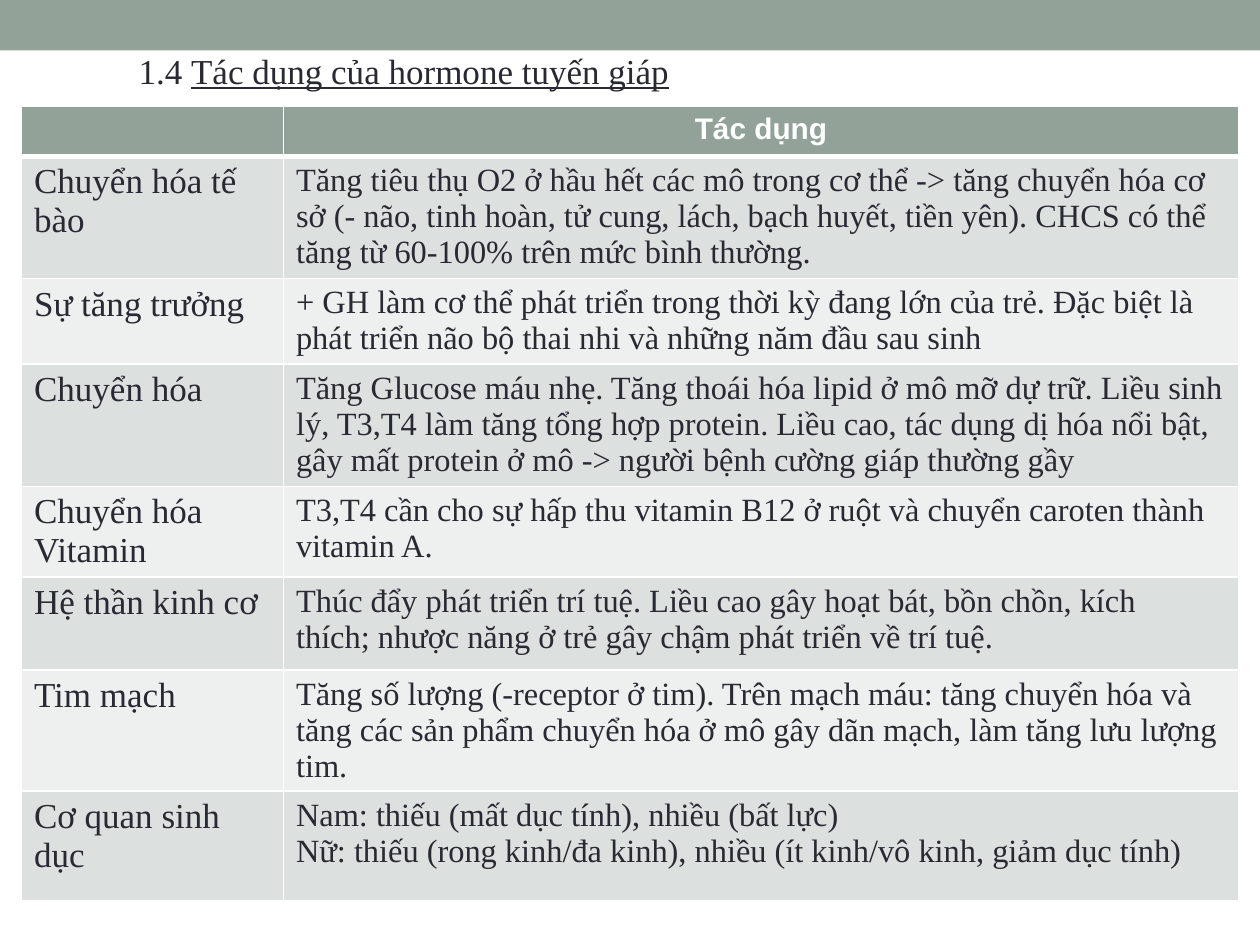
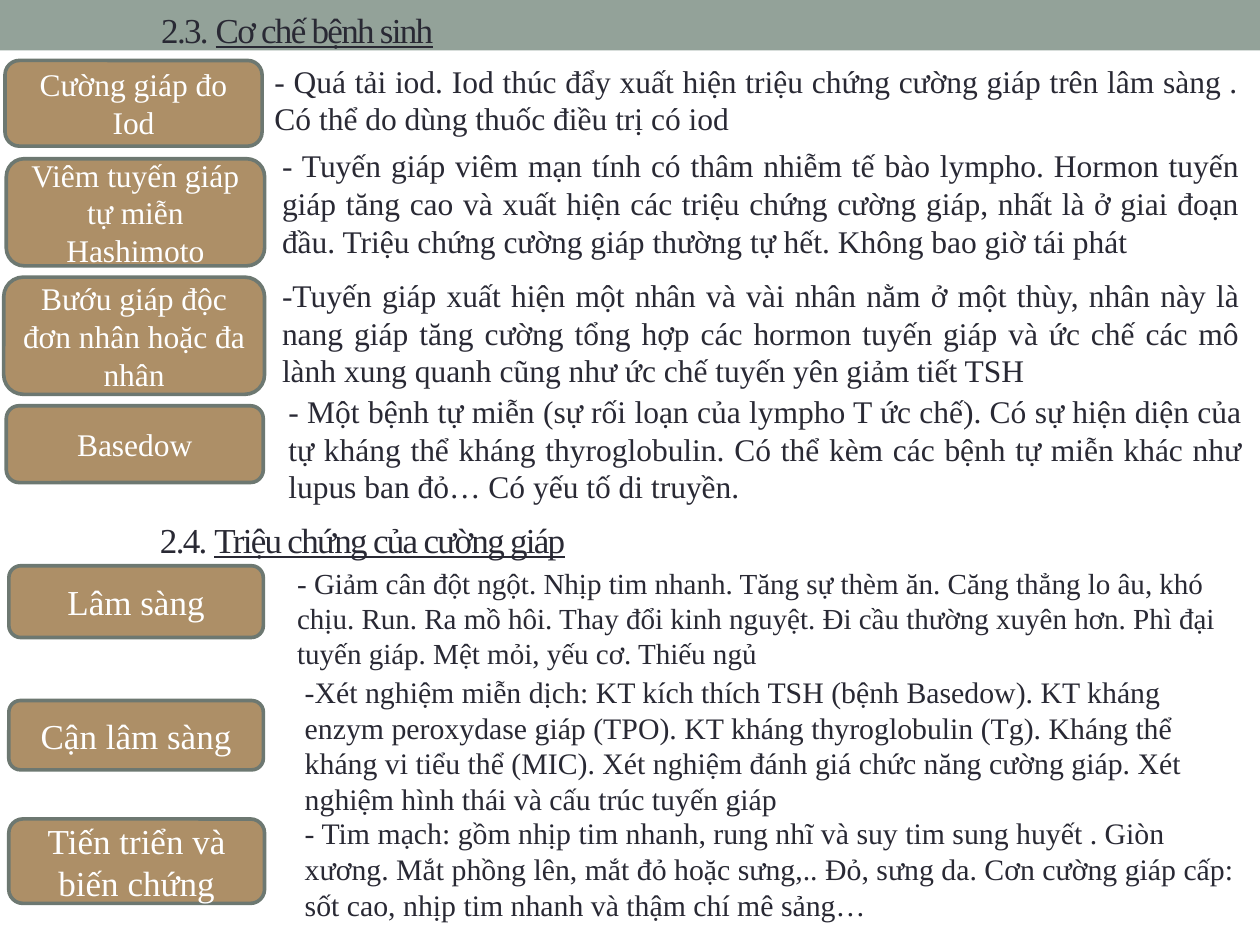
"""Build two slides on thyroid hormones and hyperthyroidism."""
from typing import NamedTuple

from lxml import etree
from pptx import Presentation
from pptx.dml.color import RGBColor
from pptx.enum.shapes import MSO_SHAPE
from pptx.enum.text import MSO_ANCHOR, PP_ALIGN
from pptx.oxml.ns import qn
from pptx.util import Inches, Pt

SAGE = RGBColor(0x93, 0xA2, 0x99)
TAN = RGBColor(0xAD, 0x8F, 0x67)
SLATE = RGBColor(0x6D, 0x78, 0x71)
INK = RGBColor(0x29, 0x29, 0x34)
WHITE = RGBColor(0xFF, 0xFF, 0xFF)
DARK = RGBColor(0xDC, 0xE0, 0xDE)
LIGHT = RGBColor(0xEE, 0xF0, 0xEF)
SERIF, SANS = "Times New Roman", "Arial"
RECT, ROUND = MSO_SHAPE.RECTANGLE, MSO_SHAPE.ROUNDED_RECTANGLE
TOP, MIDDLE = MSO_ANCHOR.TOP, MSO_ANCHOR.MIDDLE
LEFT, CENTER, FULL = PP_ALIGN.LEFT, PP_ALIGN.CENTER, PP_ALIGN.JUSTIFY
LOOSE, TIGHT = 1.2, 1.11


class Box(NamedTuple):
    """Place and size in inches."""
    left: float
    top: float
    width: float
    height: float

    def lengths(self) -> list:
        """Give the four lengths."""
        return [Inches(side) for side in self]


class Head(NamedTuple):
    """A numbered heading with an underlined title."""
    box: Box
    number: str
    title: str
    anchor: MSO_ANCHOR = MIDDLE
    track: int = -100


class Label(NamedTuple):
    """A rounded label."""
    box: Box
    text: str
    size: float


class Note(NamedTuple):
    """A block of text beside a label."""
    box: Box
    text: str
    size: float
    align: PP_ALIGN = LEFT


class Effect(NamedTuple):
    """A table row."""
    height: float
    name: str
    text: str


EFFECTS = [
    Effect(0.97, "Chuyển hóa tế bào",
           "Tăng tiêu thụ O2 ở hầu hết các mô trong cơ thể -> tăng chuyển hóa cơ sở "
           "(- não, tinh hoàn, tử cung, lách, bạch huyết, tiền yên). CHCS có thể tăng "
           "từ 60-100% trên mức bình thường."),
    Effect(0.68, "Sự tăng trưởng",
           "+ GH làm cơ thể phát triển trong thời kỳ đang lớn của trẻ. Đặc biệt là "
           "phát triển não bộ thai nhi và những năm đầu sau sinh"),
    Effect(0.97, "Chuyển hóa",
           "Tăng Glucose máu nhẹ. Tăng thoái hóa lipid ở mô mỡ dự trữ. Liều sinh lý, "
           "T3,T4 làm tăng tổng hợp protein. Liều cao, tác dụng dị hóa nổi bật, gây "
           "mất protein ở mô -> người bệnh cường giáp thường gầy"),
    Effect(0.72, "Chuyển hóa Vitamin",
           "T3,T4 cần cho sự hấp thu vitamin B12 ở ruột và chuyển caroten thành "
           "vitamin A."),
    Effect(0.74, "Hệ thần kinh cơ",
           "Thúc đẩy phát triển trí tuệ. Liều cao gây hoạt bát, bồn chồn, kích\n"
           "thích; nhược năng ở trẻ gây chậm phát triển về trí tuệ."),
    Effect(0.96, "Tim mạch",
           "Tăng số lượng (-receptor ở tim). Trên mạch máu: tăng chuyển hóa và tăng "
           "các sản phẩm chuyển hóa ở mô gây dãn mạch, làm tăng lưu lượng tim."),
    Effect(0.87, "Cơ quan sinh dục",
           "Nam: thiếu (mất dục tính), nhiều (bất lực)\n"
           "Nữ: thiếu (rong kinh/đa kinh), nhiều (ít kinh/vô kinh, giảm dục tính)"),
]
HORMONE = Head(Box(0, 0.34, 10, 0.48), "1.4 ", "Tác dụng của hormone tuyến giáp", TOP, 0)
HEADS = [
    Head(Box(0.18, -0.03, 9, 0.52), "2.3. ", "Cơ chế bệnh sinh"),
    Head(Box(0.17, 4.07, 9, 0.42), "2.4. ", "Triệu chứng của cường giáp"),
]
LABELS = [
    Label(Box(0.04, 0.48, 2.04, 0.68), "Cường giáp đo Iod", 18),
    Label(Box(0.05, 1.26, 2.05, 0.85), "Viêm tuyến giáp tự miễn Hashimoto", 18),
    Label(Box(0.03, 2.2, 2.07, 0.93), "Bướu giáp độc đơn nhân hoặc đa nhân", 18),
    Label(Box(0.05, 3.22, 2.04, 0.61), "Basedow", 18),
    Label(Box(0.07, 4.49, 2.02, 0.57), "Lâm sàng", 20),
    Label(Box(0.07, 5.56, 2.02, 0.55), "Cận lâm sàng", 20),
    Label(Box(0.07, 6.5, 2.03, 0.67), "Tiến triển và biến chứng", 20),
]
NOTES = [
    Note(Box(2.08, 0.44, 7.85, 0.71),
         "- Quá tải iod. Iod thúc đẩy xuất hiện triệu chứng cường giáp trên lâm sàng . "
         "Có thể do dùng thuốc điều trị có iod", 18, FULL),
    Note(Box(2.14, 1.11, 7.8, 1.01),
         "- Tuyến giáp viêm mạn tính có thâm nhiễm tế bào lympho. Hormon tuyến giáp "
         "tăng cao và xuất hiện các triệu chứng cường giáp, nhất là ở giai đoạn đầu. "
         "Triệu chứng cường giáp thường tự hết. Không bao giờ tái phát", 18, FULL),
    Note(Box(2.14, 2.14, 7.8, 1.01),
         "-Tuyến giáp xuất hiện một nhân và vài nhân nằm ở một thùy, nhân này là nang "
         "giáp tăng cường tổng hợp các hormon tuyến giáp và ức chế các mô lành xung "
         "quanh cũng như ức chế tuyến yên giảm tiết TSH", 18, FULL),
    Note(Box(2.19, 3.06, 7.77, 1.01),
         "- Một bệnh tự miễn (sự rối loạn của lympho T ức chế). Có sự hiện diện của tự "
         "kháng thể kháng thyroglobulin. Có thể kèm các bệnh tự miễn khác như lupus "
         "ban đỏ… Có yếu tố di truyền.", 18, FULL),
    Note(Box(2.26, 4.44, 7.65, 0.84),
         "- Giảm cân đột ngột. Nhịp tim nhanh. Tăng sự thèm ăn. Căng thẳng lo âu, khó "
         "chịu. Run. Ra mồ hôi. Thay đổi kinh nguyệt. Đi cầu thường xuyên hơn. Phì đại "
         "tuyến giáp. Mệt mỏi, yếu cơ. Thiếu ngủ", 16.6),
    Note(Box(2.32, 5.3, 7.25, 1.2),
         "-Xét nghiệm miễn dịch: KT kích thích TSH (bệnh Basedow). KT kháng enzym "
         "peroxydase giáp (TPO). KT kháng thyroglobulin (Tg). Kháng thể kháng vi tiểu "
         "thể (MIC). Xét nghiệm đánh giá chức năng cường giáp. Xét nghiệm hình thái và "
         "cấu trúc tuyến giáp", 17),
    Note(Box(2.32, 6.42, 7.62, 0.96),
         "- Tim mạch: gồm nhịp tim nhanh, rung nhĩ và suy tim sung huyết . Giòn xương. "
         "Mắt phồng lên, mắt đỏ hoặc sưng,.. Đỏ, sưng da. Cơn cường giáp cấp: sốt cao, "
         "nhịp tim nhanh và thậm chí mê sảng…", 17),
]


def write(frame, text: str, *, size: float, color: RGBColor = INK, font: str = SERIF,
          bold: bool = False, align: PP_ALIGN = LEFT, lead: float = LOOSE,
          under: str = "", track: int = 0) -> None:
    """Fill a text frame, one paragraph a line, with an optional underlined tail."""
    frame.word_wrap = True
    for index, line in enumerate(text.split("\n")):
        para = frame.add_paragraph() if index else frame.paragraphs[0]
        para.alignment = align
        para.line_spacing = Pt(round(size * lead, 1))
        for part in filter(None, (line, under)):
            run = para.add_run()
            run.text = part
            run.font.size, run.font.name, run.font.bold = Pt(size), font, bold
            run.font.color.rgb = color
            if part == under:
                run.font.underline = True
            if track:
                run.font._element.set("spc", str(track))


def draw_shape(slide, kind: MSO_SHAPE, box: Box, fill: RGBColor):
    """Add a flat filled shape without a line."""
    shape = slide.shapes.add_shape(kind, *box.lengths())
    shape.shadow.inherit = False
    shape.fill.solid()
    shape.fill.fore_color.rgb = fill
    shape.line.fill.background()
    return shape


def draw_head(slide, head: Head) -> None:
    """Add a heading set in by one inch."""
    frame = slide.shapes.add_textbox(*head.box.lengths()).text_frame
    frame.margin_left = Inches(1.1)
    frame.vertical_anchor = head.anchor
    write(frame, head.number, size=20, under=head.title, track=head.track)


def draw_label(slide, label: Label) -> None:
    """Add a rounded label."""
    shape = draw_shape(slide, ROUND, label.box, TAN)
    shape.line.color.rgb = SLATE
    shape.line.width = Pt(2.08)
    shape.text_frame.vertical_anchor = MIDDLE
    write(shape.text_frame, label.text, size=label.size, color=WHITE, align=CENTER)


def draw_note(slide, note: Note) -> None:
    """Add a block of text."""
    frame = slide.shapes.add_textbox(*note.box.lengths()).text_frame
    write(frame, note.text, size=note.size, align=note.align)


def style_cell(cell, fill: RGBColor, above: float, below: float) -> None:
    """Fill a cell and rule it in white."""
    props = cell._tc.get_or_add_tcPr()
    for side, width in (("L", 1), ("R", 1), ("T", above), ("B", below)):
        edge = etree.SubElement(props, qn(f"a:ln{side}"), w=str(Pt(width)))
        paint = etree.SubElement(edge, qn("a:solidFill"))
        etree.SubElement(paint, qn("a:srgbClr"), val=str(WHITE))
    cell.fill.solid()
    cell.fill.fore_color.rgb = fill


def draw_table(slide) -> None:
    """Add the table of hormone effects."""
    heights = [0.4] + [effect.height for effect in EFFECTS]
    box = Box(0.17, 0.84, 9.66, sum(heights))
    table = slide.shapes.add_table(len(heights), 2, *box.lengths()).table
    for column, width in zip(table.columns, (2.08, 7.58)):
        column.width = Inches(width)
    for index, height in enumerate(heights):
        table.rows[index].height = Inches(height)
        fill = (DARK if index % 2 else LIGHT) if index else SAGE
        for cell in table.rows[index].cells:
            style_cell(cell, fill, 3 if index == 1 else 1, 1 if index else 3)
    write(table.cell(0, 1).text_frame, "Tác dụng", size=17, color=WHITE, font=SANS,
          bold=True, align=CENTER, lead=1.15)
    for index, effect in enumerate(EFFECTS, 1):
        write(table.cell(index, 0).text_frame, effect.name, size=20, lead=TIGHT)
        write(table.cell(index, 1).text_frame, effect.text, size=18.5, lead=TIGHT)


def add_page(deck):
    """Add a blank slide with the top band."""
    slide = deck.slides.add_slide(deck.slide_layouts[6])
    draw_shape(slide, RECT, Box(0, 0, 10, 0.4), SAGE)
    return slide


def main() -> None:
    """Build and save the deck."""
    deck = Presentation()
    deck.slide_width, deck.slide_height = Inches(10), Inches(7.5)
    slide = add_page(deck)
    draw_head(slide, HORMONE)
    draw_table(slide)
    slide = add_page(deck)
    for head in HEADS:
        draw_head(slide, head)
    for label in LABELS:
        draw_label(slide, label)
    for note in NOTES:
        draw_note(slide, note)
    deck.save("out.pptx")


if __name__ == "__main__":
    main()
